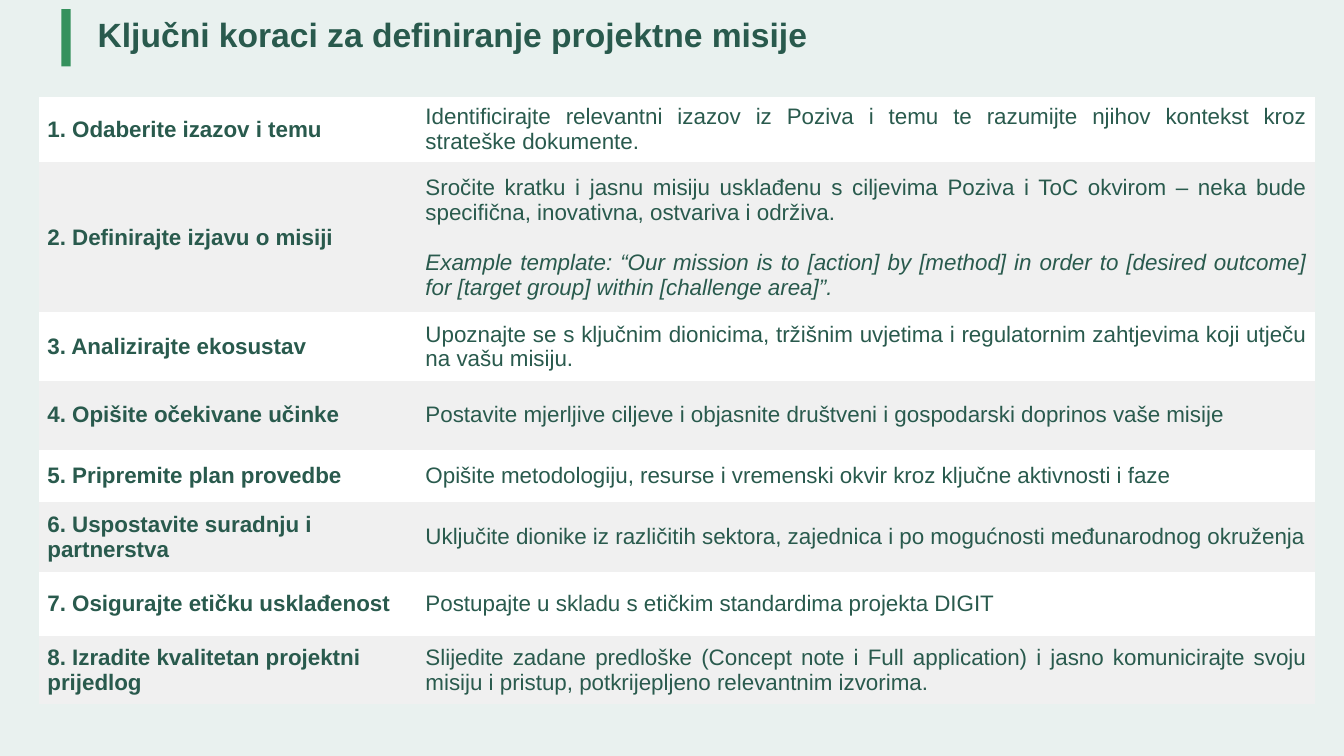
from pptx import Presentation
from pptx.dml.color import RGBColor
from pptx.enum.shapes import MSO_SHAPE
from pptx.enum.text import MSO_ANCHOR, PP_ALIGN
from pptx.oxml.ns import qn
from pptx.util import Inches, Pt

RECT = MSO_SHAPE.RECTANGLE
MIDDLE = MSO_ANCHOR.MIDDLE
LEFT, JUSTIFY = PP_ALIGN.LEFT, PP_ALIGN.JUSTIFY

FONT = "Arial"
COLORS = {
    "background": "E9F1EF",
    "text": "295A4D",
    "accent": "35915D",
    "odd_row": "FFFFFF",
    "even_row": "F0F0F0",
}
NO_STYLE_NO_GRID = "{2D5ABB26-0587-4C30-8999-92F81FD0307C}"
COLUMN_WIDTHS = (3.75, 8.9)
TEMPLATE_GAP = Pt(18)

# Row height, step name, description, optional template sentence
STEPS = [
    (0.65, "Odaberite izazov i temu",
     "Identificirajte relevantni izazov iz Poziva i temu te razumijte njihov "
     "kontekst kroz strateške dokumente."),
    (1.49, "Definirajte izjavu o misiji",
     "Sročite kratku i jasnu misiju usklađenu s ciljevima Poziva i ToC okvirom – "
     "neka bude specifična, inovativna, ostvariva i održiva.",
     "Example template: “Our mission is to [action] by [method] in order to "
     "[desired outcome] for [target group] within [challenge area]”."),
    (0.68, "Analizirajte ekosustav",
     "Upoznajte se s ključnim dionicima, tržišnim uvjetima i regulatornim "
     "zahtjevima koji utječu na vašu misiju."),
    (0.68, "Opišite očekivane učinke",
     "Postavite mjerljive ciljeve i objasnite društveni i gospodarski doprinos "
     "vaše misije"),
    (0.52, "Pripremite plan provedbe",
     "Opišite metodologiju, resurse i vremenski okvir kroz ključne aktivnosti i faze"),
    (0.7, "Uspostavite suradnju i partnerstva",
     "Uključite dionike iz različitih sektora, zajednica i po mogućnosti "
     "međunarodnog okruženja"),
    (0.63, "Osigurajte etičku usklađenost",
     "Postupajte u skladu s etičkim standardima projekta DIGIT"),
    (0.68, "Izradite kvalitetan projektni prijedlog",
     "Slijedite zadane predloške (Concept note i Full application) i jasno "
     "komunicirajte svoju misiju i pristup, potkrijepljeno relevantnim izvorima."),
]


def set_fill(fill, color):
    fill.solid()
    fill.fore_color.rgb = RGBColor.from_string(COLORS[color])


def write_paragraph(p, text, size, bold=False, italic=False, align=LEFT):
    p.text = text
    p.alignment = align
    for r in p.runs:
        r.font.name = FONT
        r.font.size = Pt(size)
        r.font.bold = bold
        r.font.italic = italic
        r.font.color.rgb = RGBColor.from_string(COLORS["text"])


def add_title(s, text):
    sp = s.shapes.add_textbox(Inches(0.87), Inches(0.13), Inches(10.71), Inches(0.47))
    tf = sp.text_frame
    tf.word_wrap = True
    tf.vertical_anchor = MIDDLE
    p = tf.paragraphs[0]
    write_paragraph(p, text, 24, bold=True)
    p.line_spacing = 0.9


def add_accent_bar(s):
    sp = s.shapes.add_shape(RECT, Inches(0.61), Inches(0.09), Inches(0.09), Inches(0.57))
    sp.shadow.inherit = False
    set_fill(sp.fill, "accent")
    sp.line.fill.background()


def format_cell(cell, color):
    set_fill(cell.fill, color)
    cell.vertical_anchor = MIDDLE
    cell.margin_left = cell.margin_right = Inches(0.08)
    cell.margin_top = cell.margin_bottom = Inches(0.04)


def add_steps_table(s):
    height = sum(step[0] for step in STEPS)
    frame = s.shapes.add_table(len(STEPS), len(COLUMN_WIDTHS), Inches(0.39), Inches(0.96),
                               Inches(sum(COLUMN_WIDTHS)), Inches(height))
    table = frame.table
    table.first_row = table.horz_banding = False
    next(frame.element.iter(qn("a:tableStyleId"))).text = NO_STYLE_NO_GRID
    for column, width in zip(table.columns, COLUMN_WIDTHS):
        column.width = Inches(width)

    for i, (row_height, name, description, *template) in enumerate(STEPS):
        table.rows[i].height = Inches(row_height)
        name_cell, description_cell = table.rows[i].cells
        for cell in (name_cell, description_cell):
            format_cell(cell, "even_row" if i % 2 else "odd_row")
        write_paragraph(name_cell.text_frame.paragraphs[0], f"{i + 1}. {name}", 16, bold=True)
        tf = description_cell.text_frame
        write_paragraph(tf.paragraphs[0], description, 16, align=JUSTIFY)
        for text in template:
            p = tf.add_paragraph()
            write_paragraph(p, text, 16, italic=True, align=JUSTIFY)
            p.space_before = TEMPLATE_GAP


def main():
    prs = Presentation()
    prs.slide_width, prs.slide_height = Inches(13.33), Inches(7.5)
    s = prs.slides.add_slide(prs.slide_layouts[6])
    set_fill(s.background.fill, "background")
    add_title(s, "Ključni koraci za definiranje projektne misije")
    add_accent_bar(s)
    add_steps_table(s)
    prs.save("out.pptx")


if __name__ == "__main__":
    main()
